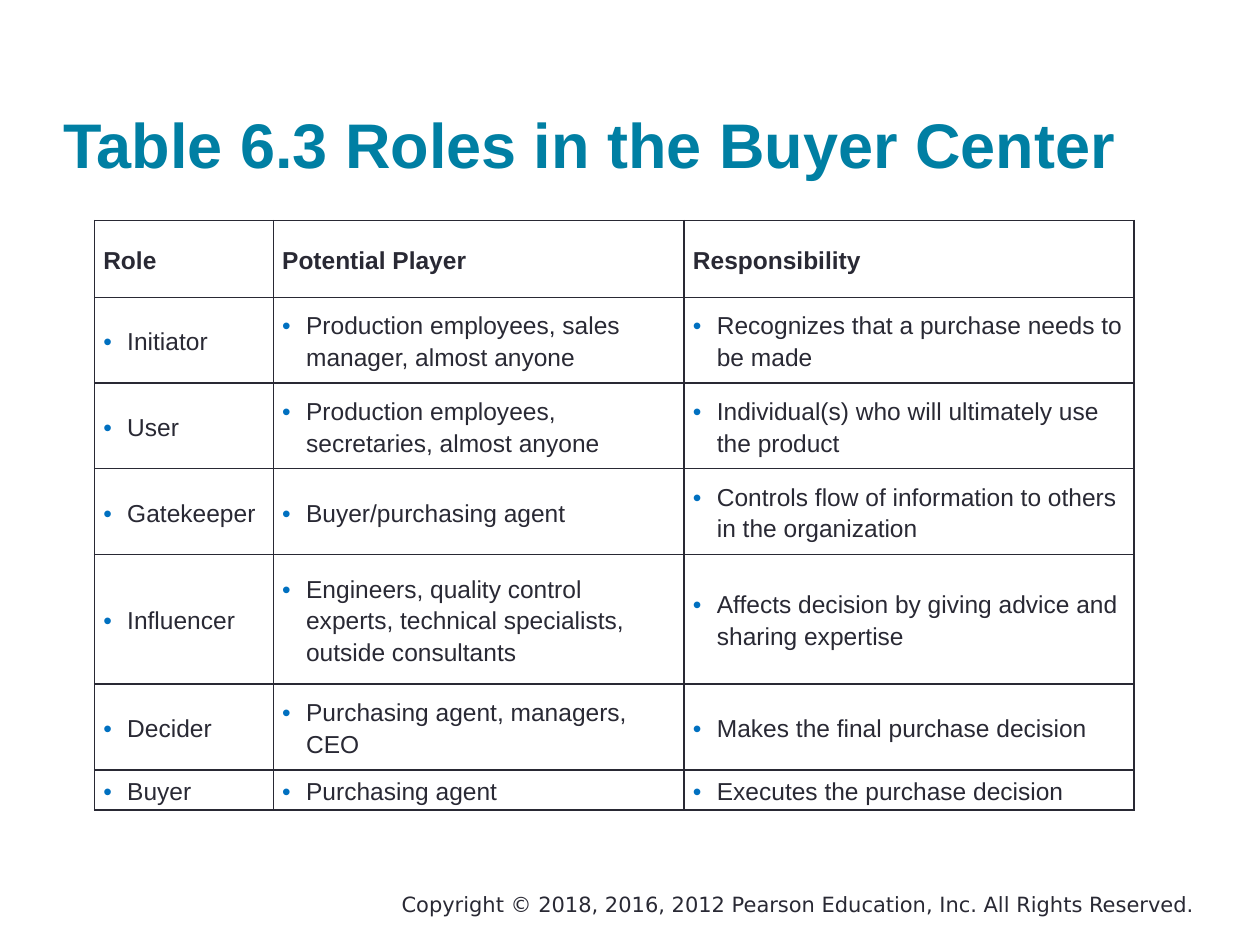
from lxml.etree import SubElement
from pptx import Presentation
from pptx.dml.color import RGBColor
from pptx.enum.text import MSO_ANCHOR, MSO_AUTO_SIZE, PP_ALIGN
from pptx.oxml.ns import qn
from pptx.util import Inches, Pt

COLORS = {"title": "007FA3", "text": "292934", "bullet": "0070C0"}

HEADERS = ["Role", "Potential Player", "Responsibility"]
ROLES = [
    ["Initiator", "Production employees, sales manager, almost anyone",
     "Recognizes that a purchase needs to be made"],
    ["User", "Production employees, secretaries, almost anyone",
     "Individual(s) who will ultimately use the product"],
    ["Gatekeeper", "Buyer/purchasing agent",
     "Controls flow of information to others in the organization"],
    ["Influencer", "Engineers, quality control experts, technical specialists, outside consultants",
     "Affects decision by giving advice and sharing expertise"],
    ["Decider", "Purchasing agent, managers, CEO", "Makes the final purchase decision"],
    ["Buyer", "Purchasing agent", "Executes the purchase decision"],
]
COLUMN_WIDTHS = [1.42, 3.26, 3.57]
ROW_HEIGHTS = [0.61, 0.68, 0.68, 0.68, 1.03, 0.68, 0.32]


class SlideBuilder:
    """Holds the text style and the slide being filled."""

    font_name = "Arial"

    def __init__(self, slide):
        self.slide = slide

    def format_runs(self, paragraph, size, color="text", bold=False, font_name=None):
        for run in paragraph.runs:
            run.font.name = font_name or self.font_name
            run.font.size = Pt(size)
            run.font.bold = bold
            run.font.color.rgb = RGBColor.from_string(COLORS[color])

    def place_text(self, shape, text, alignment):
        text_frame = shape.text_frame
        text_frame.word_wrap = True
        text_frame.text = text
        paragraph = text_frame.paragraphs[0]
        paragraph.alignment = alignment
        return text_frame, paragraph

    def add_title(self, text, left, top, width, height):
        title = self.slide.shapes.title
        title.left, title.top = Inches(left), Inches(top)
        title.width, title.height = Inches(width), Inches(height)
        text_frame, paragraph = self.place_text(title, text, PP_ALIGN.LEFT)
        text_frame.auto_size = MSO_AUTO_SIZE.NONE
        text_frame.vertical_anchor = MSO_ANCHOR.BOTTOM
        text_frame.margin_left = text_frame.margin_right = 0
        text_frame.margin_top = text_frame.margin_bottom = 0
        self.format_runs(paragraph, 36, "title", bold=True)

    def add_footer(self, text, left, top, width, height):
        box = self.slide.shapes.add_textbox(
            Inches(left), Inches(top), Inches(width), Inches(height))
        text_frame, paragraph = self.place_text(box, text, PP_ALIGN.RIGHT)
        text_frame.auto_size = MSO_AUTO_SIZE.SHAPE_TO_FIT_TEXT
        self.format_runs(paragraph, 12, font_name="DejaVu Sans")

    def add_table(self, rows, left, top, column_widths, row_heights):
        table = self.slide.shapes.add_table(
            len(rows), len(column_widths), Inches(left), Inches(top),
            Inches(sum(column_widths)), Inches(sum(row_heights))).table
        table.horz_banding = False
        for column, width in zip(table.columns, column_widths):
            column.width = Inches(width)
        for row, height in zip(table.rows, row_heights):
            row.height = Inches(height)
        for row_index, texts in enumerate(rows):
            for column_index, text in enumerate(texts):
                self.fill_cell(table.cell(row_index, column_index), text, row_index == 0)

    def fill_cell(self, cell, text, is_header):
        self.add_borders(cell)
        cell.fill.background()
        cell.vertical_anchor = MSO_ANCHOR.MIDDLE
        cell.margin_left = cell.margin_right = Inches(0.07)
        cell.margin_top = cell.margin_bottom = 0
        cell.text_frame.text = text
        paragraph = cell.text_frame.paragraphs[0]
        paragraph.line_spacing = 1.15
        if not is_header:
            self.add_bullet(paragraph)
        self.format_runs(paragraph, 14, bold=is_header)

    def add_borders(self, cell):
        properties = cell._tc.get_or_add_tcPr()
        for side in ("L", "R", "T", "B"):
            line = SubElement(properties, qn(f"a:ln{side}"), w=str(Pt(1)))
            fill = SubElement(line, qn("a:solidFill"))
            SubElement(fill, qn("a:srgbClr"), val=COLORS["text"])

    def add_bullet(self, paragraph):
        properties = paragraph._p.get_or_add_pPr()
        indent = Inches(0.19)
        properties.set("marL", str(indent))
        properties.set("indent", str(-indent))
        color = SubElement(properties, qn("a:buClr"))
        SubElement(color, qn("a:srgbClr"), val=COLORS["bullet"])
        SubElement(properties, qn("a:buFont"), typeface=self.font_name)
        SubElement(properties, qn("a:buChar"), char="•")


def main():
    presentation = Presentation()
    presentation.slide_width, presentation.slide_height = Inches(10), Inches(7.5)
    title_only = presentation.slide_layouts[5]
    builder = SlideBuilder(presentation.slides.add_slide(title_only))

    # Copyright line
    builder.add_footer(
        "Copyright © 2018, 2016, 2012 Pearson Education, Inc. All Rights Reserved.",
        1.75, 7.03, 7.83, 0.3)

    # Title
    builder.add_title("Table 6.3 Roles in the Buyer Center", 0.5, 0.24, 9, 1.2)

    # Table of roles
    builder.add_table([HEADERS] + ROLES, 0.75, 1.75, COLUMN_WIDTHS, ROW_HEIGHTS)

    presentation.save("out.pptx")


if __name__ == "__main__":
    main()
